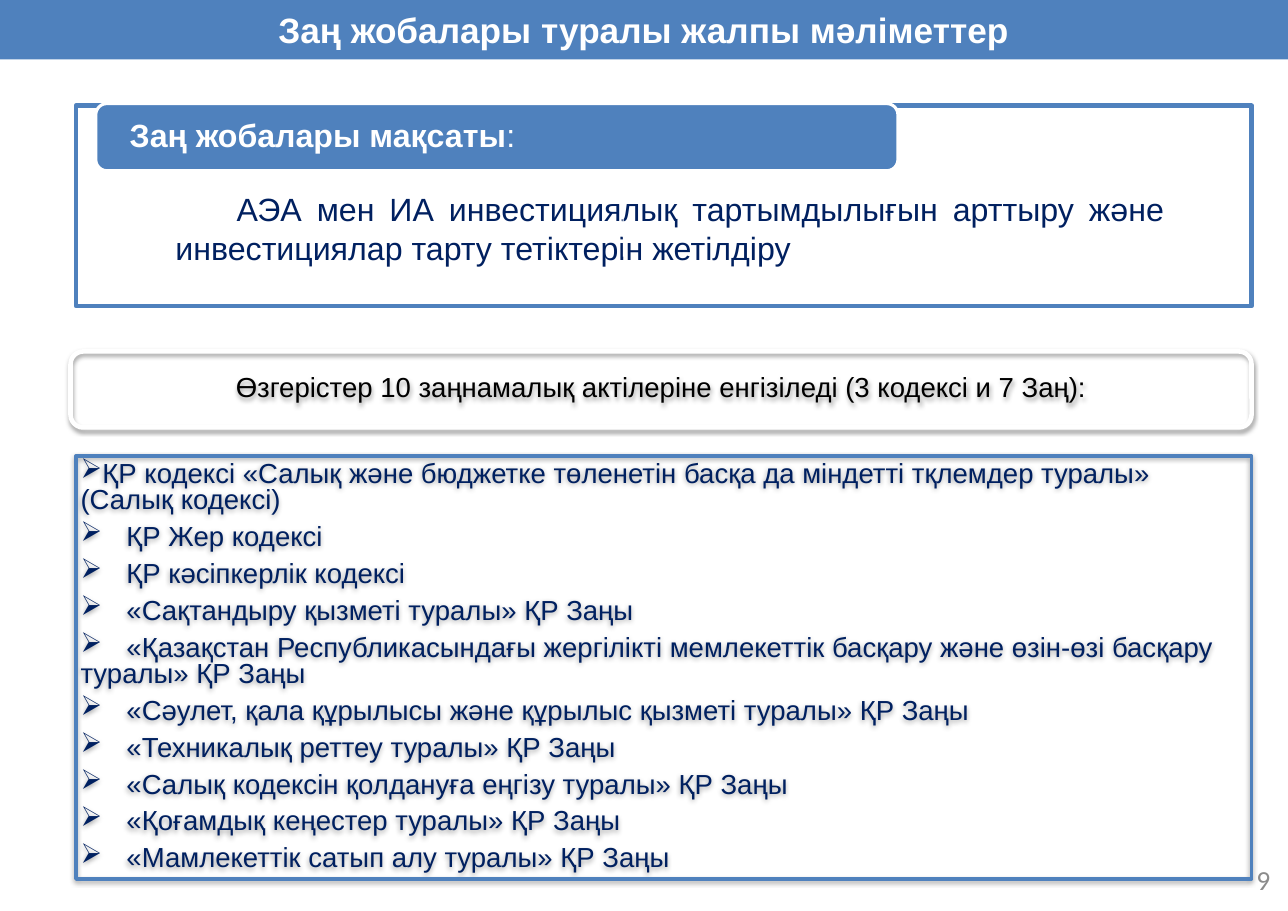
from lxml import etree
from pptx import Presentation
from pptx.dml.color import RGBColor
from pptx.enum import shapes, text
from pptx.oxml.ns import qn
from pptx.util import Pt

BLUE = RGBColor(0x4F, 0x81, 0xBD)
NAVY = RGBColor(0x00, 0x20, 0x60)
WHITE = RGBColor(0xFF, 0xFF, 0xFF)
BLACK = RGBColor(0x00, 0x00, 0x00)
GREY = RGBColor(0x8C, 0x8C, 0x8C)

RECT = shapes.MSO_SHAPE.RECTANGLE
ROUNDED = shapes.MSO_SHAPE.ROUNDED_RECTANGLE
LEFT, CENTER = text.PP_ALIGN.LEFT, text.PP_ALIGN.CENTER
RIGHT, JUSTIFY = text.PP_ALIGN.RIGHT, text.PP_ALIGN.JUSTIFY

prs = Presentation()
prs.slide_width, prs.slide_height = Pt(841.68), Pt(595.44)
s = prs.slides.add_slide(prs.slide_layouts[6])


def add_box(kind, box, fill=None, line=None, width=0, shadow=False, insets=(8, 4, 8, 4)):
    """Add a shape with optional fill, outline and soft shadow; insets run left, top, right, bottom."""
    sp = s.shapes.add_shape(kind, *map(Pt, box))
    sp.shadow.inherit = False
    if fill is None:
        sp.fill.background()
    else:
        sp.fill.solid()
        sp.fill.fore_color.rgb = fill
    if line is None:
        sp.line.fill.background()
    else:
        sp.line.color.rgb = line
        sp.line.width = Pt(width)
    if shadow:
        effects = sp._element.spPr.find(qn("a:effectLst"))
        outer = etree.SubElement(effects, qn("a:outerShdw"), blurRad=str(Pt(3.1)),
                                 dist=str(Pt(1.6)), dir="5400000", rotWithShape="0")
        color = etree.SubElement(outer, qn("a:srgbClr"), val=str(BLACK))
        etree.SubElement(color, qn("a:alpha"), val="38000")
    tf = sp.text_frame
    tf.word_wrap = True
    tf.vertical_anchor = text.MSO_ANCHOR.MIDDLE
    tf.margin_left, tf.margin_top, tf.margin_right, tf.margin_bottom = map(Pt, insets)
    return tf


def write(p, words, size=18, color=NAVY, bold=False, font="Arial", align=LEFT, spacing=1.0):
    p.alignment = align
    p.line_spacing = spacing
    r = p.add_run()
    r.text = words
    r.font.name, r.font.size, r.font.bold = font, Pt(size), bold
    r.font.color.rgb = color


# Purpose of the bills
tf = add_box(RECT, (49.7, 69.1, 768.2, 131), line=BLUE, width=3, insets=(8, 33, 57, 4))
p = tf.paragraphs[0]
write(p, "АЭА мен ИА инвестициялық тартымдылығын арттыру және "
         "инвестициялар тарту тетіктерін жетілдіру", size=21, align=JUSTIFY)
pPr = p._p.get_or_add_pPr()
pPr.set("marL", str(Pt(57)))
pPr.set("indent", str(Pt(40)))

divider = s.shapes.add_connector(shapes.MSO_CONNECTOR.STRAIGHT,
                                 Pt(406), Pt(42.5), Pt(407.5), Pt(167.8))
divider.line.color.rgb = WHITE
divider.line.width = Pt(0.75)
etree.SubElement(divider._element.spPr, qn("a:effectLst"))

# List of amended acts
acts = [
    "ҚР кодексі «Салық және бюджетке төленетін басқа да міндетті тқлемдер туралы» (Салық кодексі)",
    "ҚР Жер кодексі",
    "ҚР кәсіпкерлік кодексі",
    "«Сақтандыру қызметі туралы» ҚР Заңы",
    "«Қазақстан Республикасындағы жергілікті мемлекеттік басқару және өзін-өзі басқару туралы» ҚР Заңы",
    "«Сәулет, қала құрылысы және құрылыс қызметі туралы» ҚР Заңы",
    "«Техникалық реттеу туралы» ҚР Заңы",
    "«Салық кодексін қолдануға еңгізу туралы» ҚР Заңы",
    "«Қоғамдық кеңестер туралы» ҚР Заңы",
    "«Мамлекеттік сатып алу туралы» ҚР Заңы",
]
tf = add_box(RECT, (49.7, 298.1, 768.2, 276.5), line=BLUE, width=2.25, shadow=True,
             insets=(3, 1, 3, 1))
for i, act in enumerate(acts):
    p = tf.add_paragraph() if i else tf.paragraphs[0]
    write(p, "\t" + act if i else act, spacing=0.8)
    p.space_before = Pt(6.8)
    pPr = p._p.get_or_add_pPr()
    pPr.set("marL", "0")
    pPr.set("indent", str(Pt(-22.5)))
    etree.SubElement(pPr, qn("a:buChar"), char="➢")
    tabs = etree.SubElement(pPr, qn("a:tabLst"))
    etree.SubElement(tabs, qn("a:tab"), pos=str(Pt(30)), algn="l")

# Lead-in to the list
tf = add_box(ROUNDED, (46.1, 229.7, 771.8, 49.7), line=WHITE, width=3, shadow=True,
             insets=(0, 1, 0, 1))
write(tf.paragraphs[0], "Өзгерістер 10 заңнамалық актілеріне енгізіледі (3 кодексі и 7 Заң):",
      color=BLACK, align=CENTER, spacing=0.8)

# Heading of the purpose box
tf = add_box(ROUNDED, (62.6, 67.7, 524.2, 43.9), fill=BLUE, line=WHITE, width=2,
             insets=(20, 0, 20, 0))
p = tf.paragraphs[0]
write(p, "Заң жобалары мақсаты", size=21, color=WHITE, bold=True, spacing=0.9)
write(p, ":", size=21, color=WHITE, spacing=0.9)

# Title bar and page number
tf = add_box(RECT, (0, 0, 841.68, 38.9), fill=BLUE)
write(tf.paragraphs[0], "Заң жобалары туралы жалпы мәліметтер", size=23, color=WHITE,
      bold=True, align=CENTER)

page = s.shapes.add_textbox(Pt(648.7), Pt(560.2), Pt(189.4), Pt(31.7))
tf = page.text_frame
tf.word_wrap = True
tf.margin_left = tf.margin_right = Pt(8)
tf.margin_top = tf.margin_bottom = Pt(4)
write(tf.paragraphs[0], "9", color=GREY, font="Calibri", align=RIGHT)

prs.save("out.pptx")
